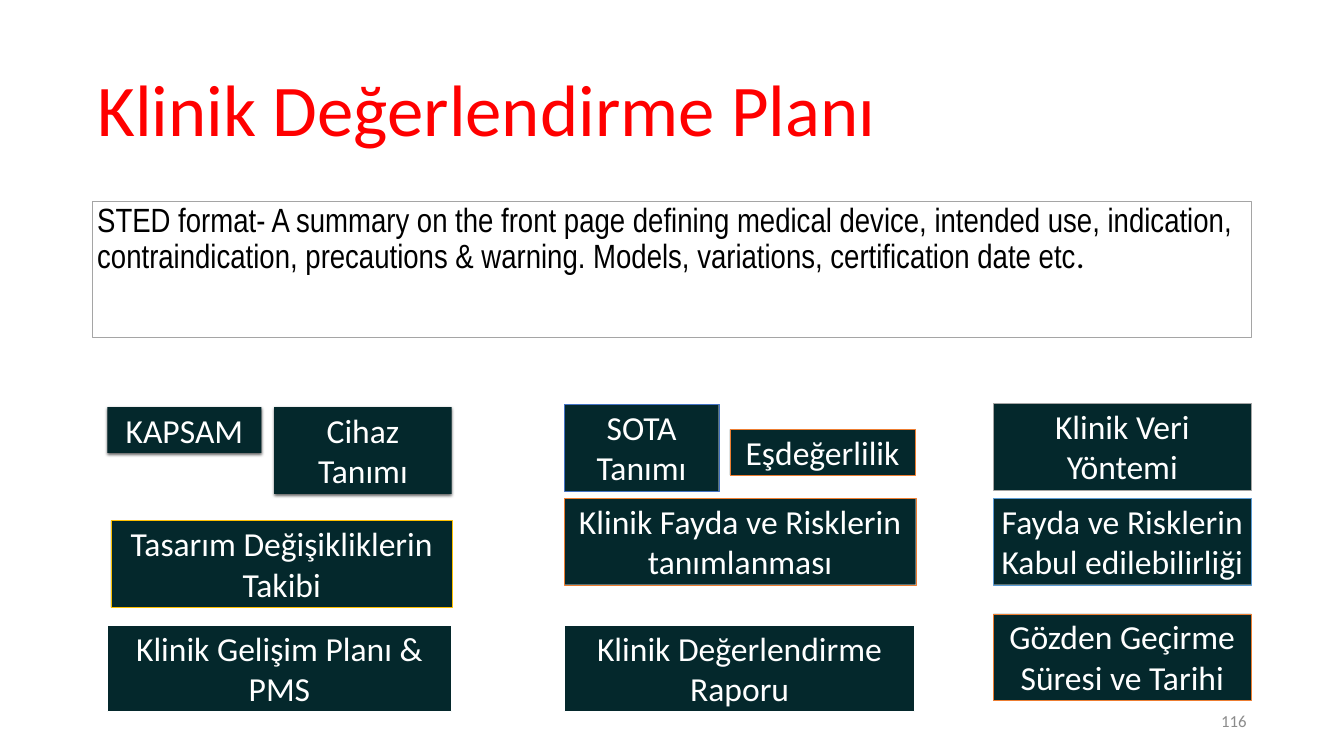
from dataclasses import dataclass

import lxml.etree
import pptx
import pptx.dml.color
import pptx.enum.shapes
import pptx.enum.text
import pptx.oxml.ns
import pptx.util
from pptx.util import Cm

ALIGN = pptx.enum.text.PP_ALIGN
ANCHOR = pptx.enum.text.MSO_ANCHOR
AUTO_SIZE = pptx.enum.text.MSO_AUTO_SIZE


@dataclass(frozen=True)
class Theme:
    font: str = "Calibri"
    summary_font: str = "Arial Narrow"
    title_size: int = 104
    text_size: int = 48
    number_size: int = 24
    title: str = "FF0000"
    ink: str = "000000"
    paper: str = "FFFFFF"
    topic: str = "04282C"
    number: str = "8C8C8C"
    grey: str = "A5A5A5"
    blue: str = "4472C4"
    sky: str = "5B9BD5"
    orange: str = "ED7D31"
    gold: str = "FFC000"


THEME = Theme()

# Lengths in centimetres
MARGIN, CONTENT_WIDTH = 4.65, 58.42
SCOPE_X, STATE_X, METHOD_X = 5.41, 28.45, 50.06
METHOD_WIDTH = 13.0
ONE_LINE, TWO_LINES = 2.31, 4.37
MIDDLE_Y, BOTTOM_Y = 25.1, 31.5


@dataclass(frozen=True)
class Topic:
    """A dark box; without an outline colour it casts a shadow instead."""
    text: str
    left: float
    top: float
    width: float
    height: float = TWO_LINES
    outline: str | None = None
    outline_width: float = 0.5


TOPICS = [
    Topic("KAPSAM", SCOPE_X, 20.52, 7.77, ONE_LINE),
    Topic("Cihaz Tanımı", 13.82, 20.52, 8.94),
    Topic("Tasarım Değişikliklerin Takibi", 5.59, 26.24, 17.22, outline=THEME.gold),
    Topic("Klinik Gelişim Planı & PMS", SCOPE_X, BOTTOM_Y, 17.35,
          outline=THEME.paper, outline_width=1.5),
    Topic("SOTA Tanımı", STATE_X, 20.37, 7.77, outline=THEME.blue),
    Topic("Eşdeğerlilik", 36.78, 21.64, 9.35, ONE_LINE, THEME.orange),
    Topic("Klinik Fayda ve Risklerin tanımlanması", STATE_X, MIDDLE_Y, 17.7,
          outline=THEME.orange),
    Topic("Klinik Değerlendirme Raporu", STATE_X, BOTTOM_Y, 17.65,
          outline=THEME.paper, outline_width=1.5),
    Topic("Klinik Veri Yöntemi", METHOD_X, 20.32, METHOD_WIDTH, outline=THEME.grey),
    Topic("Fayda ve Risklerin Kabul edilebilirliği", METHOD_X, MIDDLE_Y, METHOD_WIDTH,
          outline=THEME.sky),
    Topic("Gözden Geçirme Süresi ve Tarihi", METHOD_X, 30.94, METHOD_WIDTH,
          outline=THEME.orange),
]


def rgb(colour: str) -> pptx.dml.color.RGBColor:
    return pptx.dml.color.RGBColor.from_string(colour)


def style_font(font, size: int, colour: str, name: str = THEME.font) -> None:
    font.name = name
    font.size = pptx.util.Pt(size)
    font.color.rgb = rgb(colour)


def add_rectangle(slide, left: float, top: float, width: float, height: float,
                  fill: str, outline: str | None, outline_width: float):
    rectangle = slide.shapes.add_shape(
        pptx.enum.shapes.MSO_SHAPE.RECTANGLE, Cm(left), Cm(top), Cm(width), Cm(height))
    rectangle.shadow.inherit = False
    rectangle.fill.solid()
    rectangle.fill.fore_color.rgb = rgb(fill)
    if outline:
        rectangle.line.color.rgb = rgb(outline)
        rectangle.line.width = pptx.util.Pt(outline_width)
    else:
        rectangle.line.fill.background()
    rectangle.text_frame.word_wrap = True
    rectangle.text_frame.vertical_anchor = ANCHOR.TOP
    return rectangle


def cast_shadow(shape) -> None:
    """Put a soft downward shadow in the shape's empty effect list."""
    qn = pptx.oxml.ns.qn
    effects = shape.element.spPr.find(qn("a:effectLst"))
    shadow = lxml.etree.SubElement(
        effects, qn("a:outerShdw"), blurRad=str(pptx.util.Pt(4.5)),
        dist=str(pptx.util.Pt(1.5)), dir="5400000", rotWithShape="0")
    colour = lxml.etree.SubElement(shadow, qn("a:srgbClr"), val=THEME.ink)
    lxml.etree.SubElement(colour, qn("a:alpha"), val="63000")


def add_topic(slide, topic: Topic) -> None:
    box = add_rectangle(slide, topic.left, topic.top, topic.width, topic.height,
                        THEME.topic, topic.outline, topic.outline_width)
    if topic.outline is None:
        cast_shadow(box)
    box.text_frame.auto_size = AUTO_SIZE.SHAPE_TO_FIT_TEXT
    paragraph = box.text_frame.paragraphs[0]
    paragraph.text = topic.text
    paragraph.alignment = ALIGN.CENTER
    style_font(paragraph.font, THEME.text_size, THEME.paper)


def set_title(slide, text: str) -> None:
    title = slide.shapes.title
    title.left, title.top = Cm(MARGIN), Cm(2.03)
    title.width, title.height = Cm(CONTENT_WIDTH), Cm(7.37)
    title.text_frame.vertical_anchor = ANCHOR.MIDDLE
    title.text_frame.auto_size = AUTO_SIZE.NONE
    paragraph = title.text_frame.paragraphs[0]
    paragraph.text = text
    paragraph.alignment = ALIGN.LEFT
    paragraph.line_spacing = 0.9
    style_font(paragraph.font, THEME.title_size, THEME.title)


def add_summary(slide, text: str, full_stop: str) -> None:
    """Add the outlined summary, whose full stop is in the main font."""
    summary = add_rectangle(slide, MARGIN, 10.13, CONTENT_WIDTH, 6.86,
                            THEME.paper, THEME.grey, 1)
    paragraph = summary.text_frame.paragraphs[0]
    paragraph.alignment = ALIGN.LEFT
    paragraph.line_spacing = 0.9
    for words, font_name in ((text, THEME.summary_font), (full_stop, THEME.font)):
        run = paragraph.add_run()
        run.text = words
        style_font(run.font, THEME.text_size, THEME.ink, font_name)


def add_page_number(slide, number: str) -> None:
    page = slide.shapes.add_textbox(Cm(47.83), Cm(35.31), Cm(15.24), Cm(2.03))
    page.text_frame.word_wrap = True
    page.text_frame.vertical_anchor = ANCHOR.MIDDLE
    paragraph = page.text_frame.paragraphs[0]
    paragraph.text = number
    paragraph.alignment = ALIGN.RIGHT
    style_font(paragraph.font, THEME.number_size, THEME.number)


def main() -> None:
    deck = pptx.Presentation()
    deck.slide_width, deck.slide_height = Cm(67.73), Cm(38.1)
    slide = deck.slides.add_slide(deck.slide_layouts.get_by_name("Title Only"))
    set_title(slide, "Klinik Değerlendirme Planı")
    add_summary(slide, "STED format- A summary on the front page defining medical device, "
                "intended use, indication, contraindication, precautions & warning. "
                "Models, variations, certification date etc", ".")
    for topic in TOPICS:
        add_topic(slide, topic)
    add_page_number(slide, "116")
    deck.save("out.pptx")


if __name__ == "__main__":
    main()
